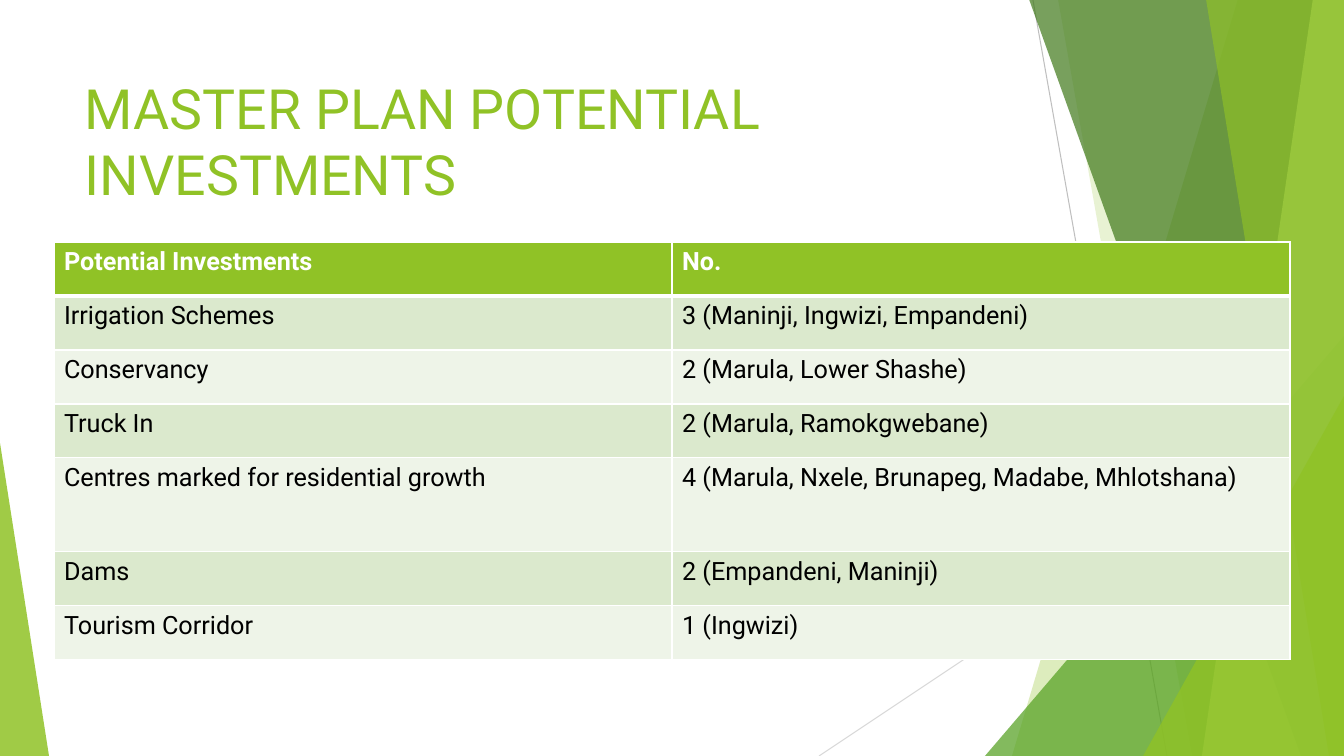
from lxml.etree import SubElement
from pptx import Presentation
from pptx.dml.color import RGBColor
from pptx.enum.shapes import MSO_CONNECTOR, MSO_SHAPE
from pptx.enum.text import MSO_ANCHOR
from pptx.oxml.ns import qn
from pptx.util import Pt

SCALE = 12192000 / 1344  # EMU in one px
WIDE, HIGH = 1344, 756
FONT = "Roboto"
HUES = {
    "lime": "90C226", "leaf": "54A021", "moss": "3F7819", "pale": "C0E474",
    "white": "FFFFFF", "black": "000000", "band": "DBE9CD", "mist": "EEF4E8",
    "gray": "BFBFBF", "silver": "D9D9D9",
}
ROWS = [
    ("Potential Investments", "No."),
    ("Irrigation Schemes", "3 (Maninji, Ingwizi, Empandeni)"),
    ("Conservancy", "2 (Marula, Lower Shashe)"),
    ("Truck In", "2 (Marula, Ramokgwebane)"),
    ("Centres marked for residential growth",
     "4 (Marula, Nxele, Brunapeg, Madabe, Mhlotshana)"),
    ("Dams", "2 (Empandeni, Maninji)"),
    ("Tourism Corridor", "1 (Ingwizi)"),
]


def px(*nums):
    return [round(n * SCALE) for n in nums]


def rgb(hue):
    return RGBColor.from_string(HUES[hue])


def write(frame, text, size=18, hue="black", bold=False):
    frame.word_wrap = True
    run = frame.paragraphs[0].add_run()
    run.text = text
    font = run.font
    font.name, font.size, font.bold = FONT, Pt(size), bold
    font.color.rgb = rgb(hue)


def paint(shape, hue, alpha):
    shape.shadow.inherit = False
    shape.line.fill.background()
    shape.fill.solid()
    shape.fill.fore_color.rgb = rgb(hue)
    color = shape.fill._xPr.find(".//" + qn("a:srgbClr"))
    SubElement(color, qn("a:alpha"), val=str(alpha * 1000))


def line(slide, ends, hue):
    link = slide.shapes.add_connector(MSO_CONNECTOR.STRAIGHT, *px(*ends))
    link.line.color.rgb = rgb(hue)
    link.line.width = Pt(0.75)
    SubElement(link._element.spPr, qn("a:effectLst"))


def shard(slide, top, foot, hue, alpha):
    """Slanted panel that reaches the right edge of the slide."""
    pen = slide.shapes.build_freeform(top, -1, scale=SCALE)
    pen.add_line_segments([(WIDE, -1), (WIDE, HIGH), (foot, HIGH)], close=True)
    paint(pen.convert_to_shape(), hue, alpha)


def wedge(slide, box, tip, hue, alpha):
    shape = slide.shapes.add_shape(MSO_SHAPE.ISOSCELES_TRIANGLE, *px(*box))
    shape.adjustments[0] = tip
    paint(shape, hue, alpha)


def edge(cell, head):
    """White cell borders, thicker below the header."""
    props = cell._tc.get_or_add_tcPr()
    for spot, side in enumerate(("lnL", "lnR", "lnT", "lnB")):
        width = Pt(3 if head and side == "lnB" else 1)
        border = SubElement(props, qn("a:" + side), w=str(width))
        fill = SubElement(border, qn("a:solidFill"))
        SubElement(fill, qn("a:srgbClr"), val=HUES["white"])
        props.remove(border)
        props.insert(spot, border)


def grid(slide, left, top, width):
    highs = [94 if row == 4 else 54 for row in range(len(ROWS))]
    frame = slide.shapes.add_table(
        len(ROWS), 2, *px(left, top, width, sum(highs)))
    table = frame.table
    for row, (texts, high) in enumerate(zip(ROWS, highs)):
        table.rows[row].height = px(high)[0]
        head = row == 0
        fill = "lime" if head else ("mist", "band")[row % 2]
        for col, text in enumerate(texts):
            cell = table.cell(row, col)
            cell.fill.solid()
            cell.fill.fore_color.rgb = rgb(fill)
            edge(cell, head)
            write(cell.text_frame, text, bold=head,
                  hue="white" if head else "black")


def title(slide, text, box):
    frame = slide.shapes.add_textbox(*px(*box)).text_frame
    frame.vertical_anchor = MSO_ANCHOR.MIDDLE
    write(frame, text, size=39.6, hue="lime")


def main():
    deck = Presentation()
    deck.slide_width, deck.slide_height = px(WIDE, HIGH)
    slide = deck.slides.add_slide(deck.slide_layouts[6])

    # Green backdrop, from back to front
    line(slide, (1033, 0, 1167, HIGH), "gray")
    line(slide, (WIDE, 406, 819, HIGH), "silver")
    shard(slide, 1238, 1012, "lime", 30)
    shard(slide, 1058, 1192, "lime", 20)
    wedge(slide, (985, 336, 359, 420), 1, "leaf", 72)
    shard(slide, 1029, 1301, "moss", 70)
    shard(slide, 1313, 1202, "pale", 70)
    shard(slide, 1206, 1329, "lime", 65)
    wedge(slide, (1143, 396, 201, 360), 1, "lime", 80)
    wedge(slide, (0, 443, 49, 313), 0, "lime", 85)

    # Title and table
    title(slide, "MASTER PLAN POTENTIAL INVESTMENTS", (75, 68, 948, 145))
    grid(slide, 54, 242, 1236)
    deck.save("out.pptx")


if __name__ == "__main__":
    main()
